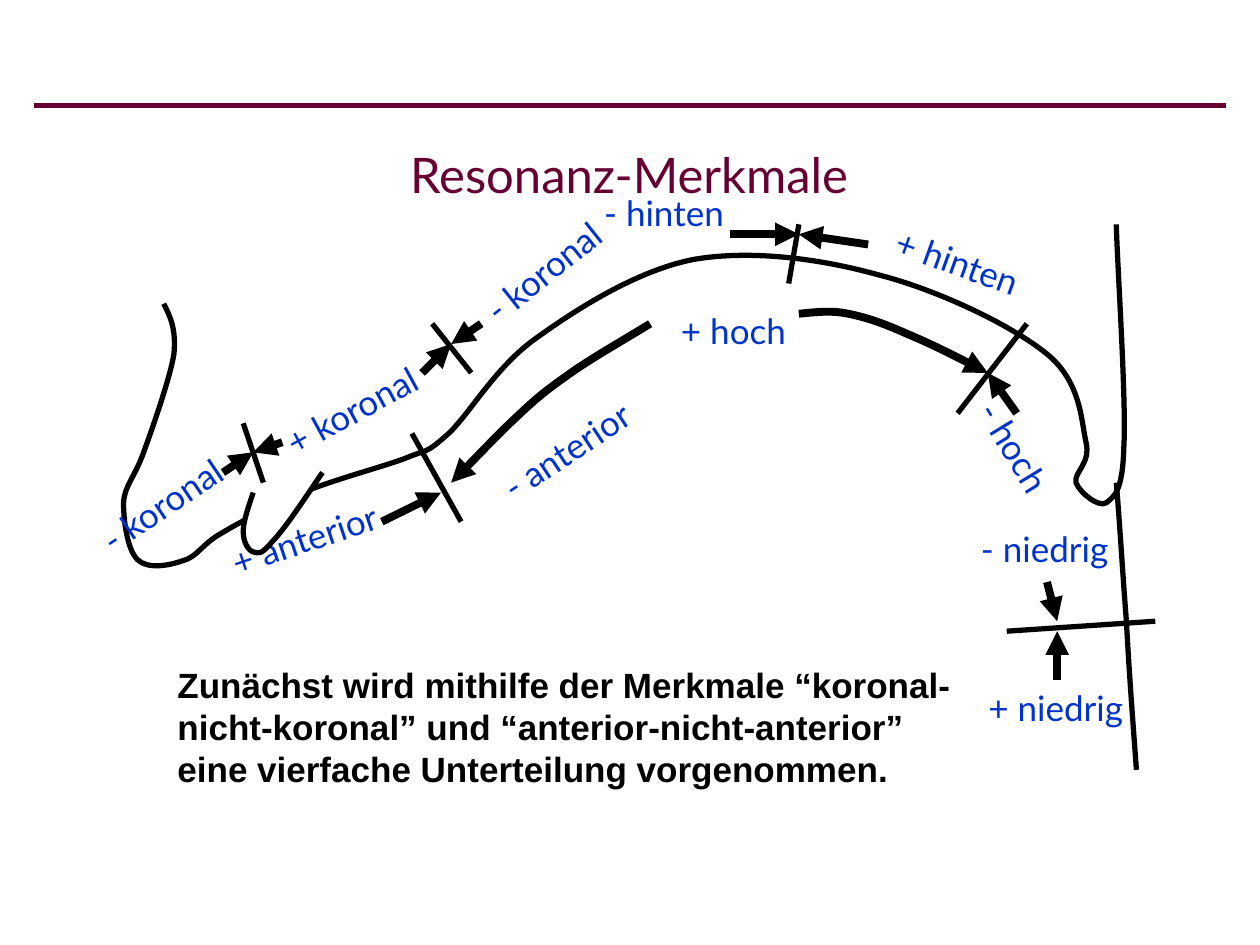
from lxml import etree
from pptx import Presentation
from pptx.dml.color import RGBColor
from pptx.enum.shapes import MSO_CONNECTOR
from pptx.enum.text import MSO_ANCHOR, MSO_AUTO_SIZE, PP_ALIGN
from pptx.oxml.ns import qn
from pptx.util import Pt

STRAIGHT = MSO_CONNECTOR.STRAIGHT
MIDDLE, TOP = MSO_ANCHOR.MIDDLE, MSO_ANCHOR.TOP
CENTER, LEFT = PP_ALIGN.CENTER, PP_ALIGN.LEFT
GROW, FIXED = MSO_AUTO_SIZE.SHAPE_TO_FIT_TEXT, MSO_AUTO_SIZE.NONE

BLACK = RGBColor(0x00, 0x00, 0x00)
WHITE = RGBColor(0xFF, 0xFF, 0xFF)
WINE = RGBColor(0x66, 0x00, 0x33)
BLUE = RGBColor(0x00, 0x33, 0xCC)

OUTLINE, ARROW = 3, 4.5  # line widths

TITLE_FONT = {"name": "Lato", "size": Pt(28), "color": WINE}
LABEL_FONT = {"name": "Lato", "size": Pt(20), "color": BLUE}
BODY_FONT = {"name": "Arial", "size": Pt(20), "color": BLACK, "bold": True}

# Curves: a start point, then two control points and an end point per segment
PALATE = [
    (93.6, 173.5),
    (97.2, 180.7), (100.8, 187.9), (99.4, 202.3),
    (97.2, 216), (87.1, 244.8), (82.1, 258.5),
    (77, 272.9), (71.3, 277.2), (70.6, 287.3),
    (70.6, 297.4), (72.7, 313.9), (78.5, 319.7),
    (84.2, 325.4), (96.5, 323.3), (104.4, 320.4),
    (113, 318.2), (115.2, 311), (126.7, 304.6),
    (137.5, 298.1), (155.5, 288.7), (172.8, 281.5),
    (190.1, 274.3), (217.4, 267.1), (231.1, 262.1),
    (244.8, 256.3), (242.6, 259.9), (255.6, 248.4),
    (267.8, 237.6), (283, 209.5), (306.7, 193),
    (329.8, 176.4), (363.6, 154.8), (396, 148.3),
    (428.4, 142.6), (468, 147.6), (501.8, 157),
    (535.7, 165.6), (578.2, 185.8), (598.3, 202.3),
    (617.8, 218.2), (617.8, 240.5), (620.6, 252.7),
    (623.5, 265), (613.4, 270), (614.9, 275.8),
    (617, 281.5), (627.8, 290.2), (632.2, 287.3),
    (636.5, 283.7), (641.5, 281.5), (642.2, 255.6),
    (643.7, 229), (638.6, 154.8), (637.9, 128.2),
]
THROAT = [(637.9, 275.8), (640.1, 301.7), (641.5, 327.6), (643.7, 355),
          (645.1, 382.3), (647.3, 411.1), (649.4, 439.9)]
ANTERIOR_SWEEP = [(371.5, 185), (355, 195.1), (338.4, 204.5), (326.2, 213.1),
                  (313.9, 221.8), (308.9, 225.4), (297.4, 236.2),
                  (286.6, 246.2), (272.2, 261.4), (257.8, 275.8)]
HIGH_SWEEP = [(456.5, 179.3), (465.1, 178.6), (474.5, 177.1), (484.6, 179.3),
              (495.4, 181.4), (505.4, 185), (518.4, 190.8),
              (532.1, 196.6), (547.9, 204.5), (564.5, 213.1)]
TOOTH = [(144.7, 281.5), (141.8, 290.2), (139, 298.1), (139, 303.8),
         (139, 309.6), (141.8, 314.6), (144.7, 315.4),
         (147.6, 316.1), (149, 317.5), (155.5, 309.6),
         (162.7, 302.4), (173.5, 285.8), (184.3, 270)]

# Straight lines: x1, y1, x2, y2
BOUNDARIES = [
    (575.3, 360.7, 660.2, 355), (139, 241.9, 150.5, 275.8),
    (247, 185, 269.3, 213.1), (456.5, 128.2, 450.7, 162),
    (586.8, 185, 547.2, 236.2), (235.4, 247.7, 263.5, 298.1),
]
ARROWS = [
    (598.3, 332.6, 604.1, 355), (604.1, 388.8, 604.1, 360.7),
    (581, 236.2, 564.5, 213.1), (496.1, 139.7, 456.5, 133.9),
    (416.9, 133.9, 456.5, 133.9), (218.2, 298.1, 252, 281.5),
    (127.4, 270, 144.7, 258.5), (161.3, 252.7, 144.7, 258.5),
    (241.2, 213.1, 257.8, 196.6), (275, 185, 257.8, 196.6),
]

# Feature labels: text, left, top, width, rotation
LABEL_HEIGHT = 31
LABELS = [
    ("+ niedrig", 555.8, 388.8, 95, 0), ("+ hoch", 380.2, 173.5, 77.8, 0),
    ("- hoch", 542.9, 239.8, 73.4, 58.6),
    ("+ anterior", 121.7, 292.3, 104.4, 341.4),
    ("- anterior", 275, 241.9, 97.2, 326.7),
    ("- koronal", 46.1, 272.9, 92.9, 326.1),
    ("+ koronal", 150.5, 218.9, 100.8, 331.4),
    ("- koronal", 263.5, 139.7, 93.6, 321.5),
    ("- hinten", 337.7, 105.8, 83.5, 0),
    ("+ hinten", 501.8, 133.9, 90.7, 19.8),
    ("- niedrig", 553, 298.1, 87.8, 0),
]


def style_line(shape, color, width, arrow):
    shape.line.color.rgb = color
    shape.line.width = Pt(width)
    if arrow:
        line = shape.line._get_or_add_ln()
        etree.SubElement(line, qn("a:tailEnd"), type="triangle")


def add_line(slide, ends, width=OUTLINE, color=BLACK, arrow=False):
    line = slide.shapes.add_connector(STRAIGHT, *map(Pt, ends))
    style_line(line, color, width, arrow)
    etree.SubElement(line._element.spPr, qn("a:effectLst"))


def add_curve(slide, points, width=OUTLINE, fill=None, arrow=False):
    start, *rest = [(Pt(x), Pt(y)) for x, y in points]
    builder = slide.shapes.build_freeform(*start)
    builder.add_line_segments(rest, close=False)
    curve = builder.convert_to_shape()
    # Turn every three straight segments into one Bézier segment
    segments = list(curve._element.iter(qn("a:lnTo")))
    for i in range(0, len(segments), 3):
        bezier = etree.Element(qn("a:cubicBezTo"))
        segments[i].addprevious(bezier)
        for segment in segments[i:i + 3]:
            bezier.append(segment[0])
            segment.getparent().remove(segment)
    curve.shadow.inherit = False
    if fill is None:
        curve.fill.background()
    else:
        curve.fill.solid()
        curve.fill.fore_color.rgb = fill
    style_line(curve, BLACK, width, arrow)


def write_text(shape, text, font_format, align, anchor=TOP, wrap=True, fit=FIXED):
    frame = shape.text_frame
    frame.text = text
    frame.word_wrap = wrap
    frame.auto_size = fit
    frame.vertical_anchor = anchor
    paragraph = frame.paragraphs[0]
    paragraph.alignment = align
    for attribute, value in font_format.items():
        if attribute == "color":
            paragraph.runs[0].font.color.rgb = value
        else:
            setattr(paragraph.runs[0].font, attribute, value)


def add_title(slide, text):
    title = slide.shapes.title
    title.left, title.top, title.width, title.height = map(Pt, (19.5, 60.5, 680, 77.8))
    write_text(title, text, TITLE_FONT, CENTER, MIDDLE)


def add_label(slide, text, left, top, width, rotation):
    label = slide.shapes.add_textbox(Pt(left), Pt(top), Pt(width), Pt(LABEL_HEIGHT))
    label.rotation = rotation
    write_text(label, text, LABEL_FONT, CENTER, wrap=False, fit=GROW)


def main():
    deck = Presentation()
    deck.slide_width, deck.slide_height = Pt(720), Pt(540)
    slide = deck.slides.add_slide(deck.slide_layouts[5])

    # Heading and explanation
    add_line(slide, (19.5, 60.5, 700.5, 60.5), color=WINE)
    add_title(slide, "Resonanz-Merkmale")
    explanation = slide.shapes.add_textbox(Pt(94.3), Pt(375.8), Pt(473.8), Pt(98))
    write_text(explanation, "Zunächst wird mithilfe der Merkmale “koronal-nicht-koronal” "
               "und “anterior-nicht-anterior” eine vierfache Unterteilung vorgenommen.",
               BODY_FONT, LEFT)

    # Vocal tract with the boundaries between features
    add_curve(slide, PALATE)
    add_curve(slide, THROAT)
    for boundary in BOUNDARIES:
        add_line(slide, boundary)
    for sweep in (ANTERIOR_SWEEP, HIGH_SWEEP):
        add_curve(slide, sweep, ARROW, arrow=True)

    # Feature labels, the tooth above them, and arrows to the boundaries
    for label in LABELS:
        add_label(slide, *label)
    add_curve(slide, TOOTH, fill=WHITE)
    for arrow_ends in ARROWS:
        add_line(slide, arrow_ends, ARROW, arrow=True)

    deck.save("out.pptx")


if __name__ == "__main__":
    main()
